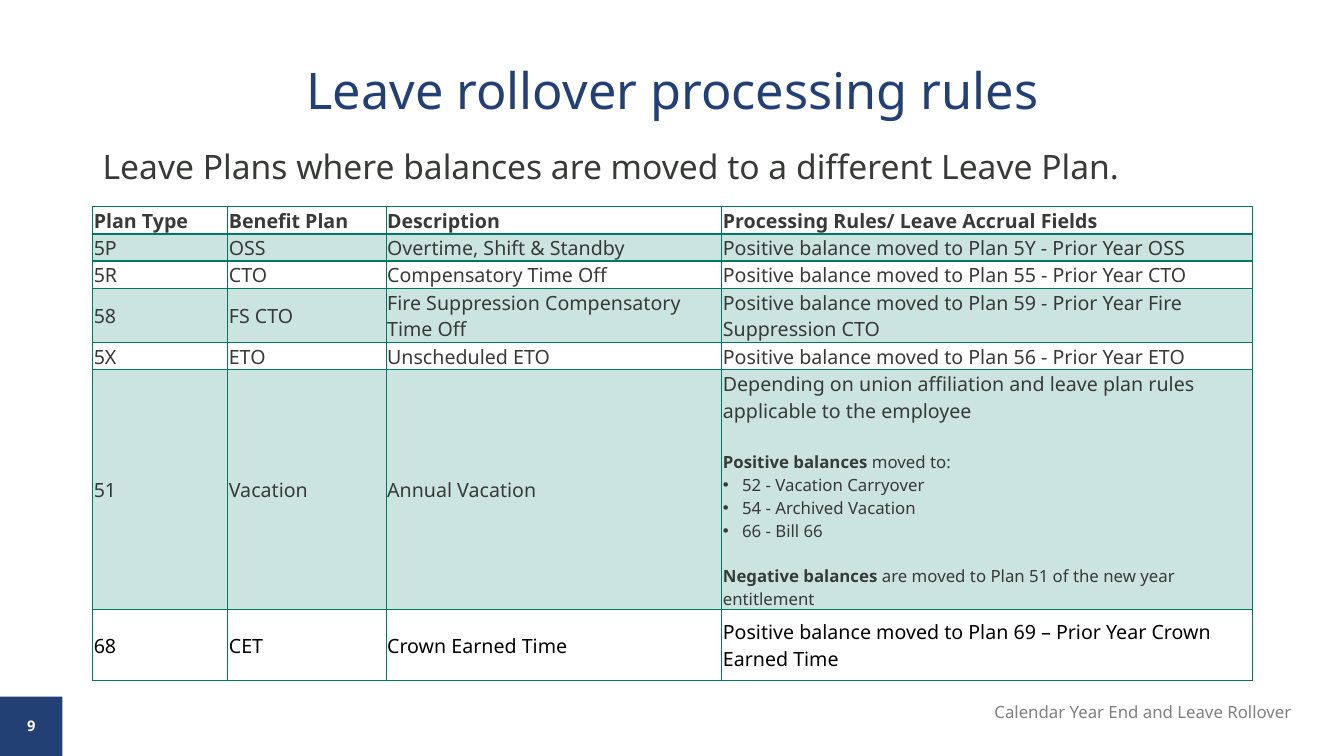
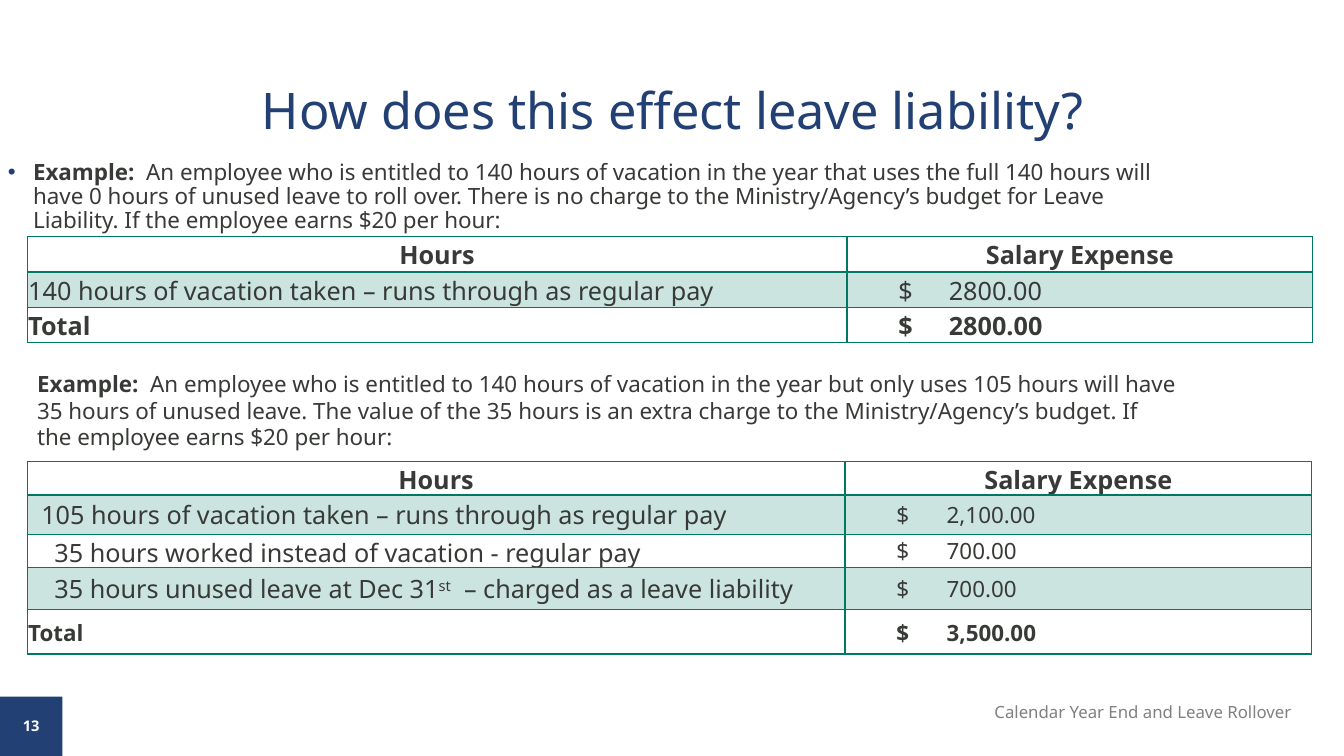
from dataclasses import dataclass
from lxml.etree import SubElement
from pptx import Presentation
from pptx.dml.color import RGBColor
from pptx.enum.shapes import MSO_SHAPE
from pptx.enum.text import MSO_ANCHOR, PP_ALIGN
from pptx.oxml.ns import qn
from pptx.util import Inches, Pt

FONT = "Noto Sans"
NAVY = "234075"
GREEN = "007864"
INK = "373A36"
BLACK = "000000"
GRAY = "808080"
WHITE = "FFFFFF"
TINT_PERCENT = 20


def color(value):
    return RGBColor.from_string(value)


def add_color(parent, value):
    fill = SubElement(parent, qn("a:solidFill"))
    SubElement(fill, qn("a:srgbClr"), val=value)


@dataclass
class Text:
    runs: object
    size: float = 14
    color: str = INK
    bold: bool = False
    align: object = PP_ALIGN.LEFT
    line_spacing: float = 1.0
    before: float = 0
    indent: float = 0
    bullet: str = ""
    tabs: tuple = ()


class Deck:
    def __init__(self):
        self.presentation = Presentation()
        self.presentation.slide_width = Inches(13.33)
        self.presentation.slide_height = Inches(7.5)
        self.slide = None

    def add_slide(self, number, title, title_height):
        layout = self.presentation.slide_layouts[6]
        self.slide = self.presentation.slides.add_slide(layout)
        self.add_band()
        self.add_text(0, 7.02, 0.62, 0.38,
                      Text(number, 10.5, WHITE, True, PP_ALIGN.CENTER), side=0.2, edge=0.1)
        self.add_text(9.67, 6.91, 3.24, 0.3,
                      Text("Calendar Year End and Leave Rollover", 12, GRAY, align=PP_ALIGN.RIGHT))
        self.add_text(0.92, 0.4, 11.5, title_height,
                      Text(title, 36, NAVY, align=PP_ALIGN.CENTER, line_spacing=0.9),
                      anchor=MSO_ANCHOR.MIDDLE)

    def add_band(self):
        band = self.slide.shapes.add_shape(
            MSO_SHAPE.RECTANGLE, Inches(0), Inches(6.91), Inches(0.62), Inches(0.59))
        band.shadow.inherit = False
        band.fill.solid()
        band.fill.fore_color.rgb = color(NAVY)
        band.line.fill.background()

    def add_text(self, left, top, width, height, text, anchor=MSO_ANCHOR.TOP, side=0.1, edge=0.05):
        box = self.slide.shapes.add_textbox(Inches(left), Inches(top), Inches(width), Inches(height))
        frame = box.text_frame
        frame.word_wrap = True
        frame.vertical_anchor = anchor
        frame.margin_left = frame.margin_right = Inches(side)
        frame.margin_top = frame.margin_bottom = Inches(edge)
        self.fill_frame(frame, [text])

    def fill_frame(self, frame, texts):
        for index, text in enumerate(texts):
            paragraph = frame.add_paragraph() if index else frame.paragraphs[0]
            self.fill_paragraph(paragraph, text)

    def fill_paragraph(self, paragraph, text):
        paragraph.alignment = text.align
        paragraph.line_spacing = text.line_spacing
        paragraph.space_before = Pt(text.before)
        self.set_indent(paragraph, text)
        runs = [(text.runs, "")] if isinstance(text.runs, str) else text.runs
        for content, style in runs:
            run = paragraph.add_run()
            run.text = content
            run.font.name = FONT
            run.font.size = Pt(text.size)
            run.font.bold = text.bold or style == "bold"
            run.font.color.rgb = color(text.color)
            if style == "superscript":
                run._r.get_or_add_rPr().set("baseline", "30000")

    def set_indent(self, paragraph, text):
        properties = paragraph._p.get_or_add_pPr()
        properties.set("marL", str(Inches(text.indent)))
        properties.set("indent", str(-Inches(text.indent) if text.bullet else 0))
        if text.bullet:
            bullet_color = SubElement(properties, qn("a:buClr"))
            SubElement(bullet_color, qn("a:srgbClr"), val=text.bullet)
            SubElement(properties, qn("a:buFont"), typeface="Arial")
            SubElement(properties, qn("a:buChar"), char="•")
        if text.tabs:
            tab_list = SubElement(properties, qn("a:tabLst"))
            for position, alignment in zip(text.tabs, ("l", "r")):
                SubElement(tab_list, qn("a:tab"), pos=str(Inches(position)), algn=alignment)

    def add_table(self, left, top, widths, heights, header, rows, header_anchor=MSO_ANCHOR.MIDDLE):
        table = self.slide.shapes.add_table(
            len(heights), len(widths), Inches(left), Inches(top),
            Inches(sum(widths)), Inches(sum(heights))).table
        table.first_row = table.horz_banding = False
        for column, width in zip(table.columns, widths):
            column.width = Inches(width)
        for row, height in zip(table.rows, heights):
            row.height = Inches(height)
        for row_index, texts in enumerate([header] + rows):
            for column_index, content in enumerate(texts):
                cell = table.cell(row_index, column_index)
                cell.vertical_anchor = MSO_ANCHOR.MIDDLE if row_index else header_anchor
                cell.margin_left = cell.margin_right = cell.margin_top = Inches(0.01)
                cell.margin_bottom = 0
                self.set_borders(cell, row_index)
                self.fill_cell(cell, row_index % 2 == 1)
                self.fill_frame(cell.text_frame, content if isinstance(content, list) else [content])

    def set_borders(self, cell, row_index):
        widths = {"lnL": 1, "lnR": 1, "lnT": 2 if row_index == 1 else 1, "lnB": 1 if row_index else 2}
        for side, width in widths.items():
            line = SubElement(cell._tc.get_or_add_tcPr(), qn("a:" + side), w=str(Pt(width)))
            add_color(line, GREEN)

    def fill_cell(self, cell, shaded):
        if not shaded:
            cell.fill.background()
            return
        cell.fill.solid()
        cell.fill.fore_color.rgb = color(GREEN)
        tint = cell._tc.tcPr.find(qn("a:solidFill"))[0]
        SubElement(tint, qn("a:alpha"), val=str(TINT_PERCENT * 1000))


def build_rules(deck):
    deck.add_slide("9", "Leave rollover processing rules", 1.04)
    deck.add_text(0.92, 1.44, 11.5, 0.6,
                  Text("Leave Plans where balances are moved to a different Leave Plan.", 24,
                       line_spacing=0.9, before=10))
    header = ["Plan Type", "Benefit Plan", "Description", "Processing Rules/ Leave Accrual Fields"]
    plans = [
        ("5P", "OSS", "Overtime, Shift & Standby",
         "Positive balance moved to Plan 5Y - Prior Year OSS"),
        ("5R", "CTO", "Compensatory Time Off",
         "Positive balance moved to Plan 55 - Prior Year CTO"),
        ("58", "FS CTO", "Fire Suppression Compensatory Time Off",
         "Positive balance moved to Plan 59 - Prior Year Fire Suppression CTO"),
        ("5X", "ETO", "Unscheduled ETO",
         "Positive balance moved to Plan 56 - Prior Year ETO"),
    ]
    targets = ["52 - Vacation Carryover", "54 - Archived Vacation", "66 - Bill 66"]
    vacation_rules = [
        Text("Depending on union affiliation and leave plan rules applicable to the employee"),
        Text([("Positive balances ", "bold"), ("moved to:", "")], 12, before=19),
        *[Text(target, 12, indent=0.19, bullet=INK) for target in targets],
        Text([("Negative balances ", "bold"),
              ("are moved to Plan 51 of the new year entitlement", "")], 12, before=16),
    ]
    crown = ["68", "CET", "Crown Earned Time",
             "Positive balance moved to Plan 69 – Prior Year Crown Earned Time"]
    rows = [[Text(value) for value in plan] for plan in plans]
    rows.append([Text("51"), Text("Vacation"), Text("Annual Vacation"), vacation_rules])
    rows.append([Text(value, color=BLACK) for value in crown])
    deck.add_table(0.92, 2.05, [1.34, 1.57, 3.33, 5.26], [0.27, 0.27, 0.27, 0.54, 0.27, 2.38, 0.7],
                   [Text(label, bold=True) for label in header], rows, MSO_ANCHOR.BOTTOM)


def build_liability(deck):
    deck.add_slide("13", "How does this effect leave liability?", 1.45)
    header = [Text(label, 18, bold=True, align=PP_ALIGN.CENTER) for label in ("Hours", "Salary Expense")]

    def amount(value, size, tabs, bold=False):
        return Text(f"\t$\t{value}", size, bold=bold, tabs=tabs)

    deck.add_text(-0.02, 1.55, 11.79, 0.8, Text([
        ("Example:  ", "bold"),
        ("An employee who is entitled to 140 hours of vacation in the year that uses the full 140 hours "
         "will have 0 hours of unused leave to roll over. There is no charge to the Ministry/Agency’s "
         "budget for Leave Liability. If the employee earns $20 per hour:", "")],
        16, line_spacing=0.9, before=10, indent=0.25, bullet=NAVY))
    full_tabs = (1.01, 3.57)
    deck.add_table(0.27, 2.35, [8.13, 4.62], [0.35] * 3, header, [
        [Text("140 hours of vacation taken – runs through as regular pay", 18),
         amount("2800.00", 18, full_tabs)],
        [Text("Total", 18, bold=True), amount("2800.00", 18, full_tabs, True)],
    ])

    deck.add_text(0.27, 3.62, 11.5, 0.91, Text([
        ("Example:  ", "bold"),
        ("An employee who is entitled to 140 hours of vacation in the year but only uses 105 hours will "
         "have 35 hours of unused leave. The value of the 35 hours is an extra charge to the "
         "Ministry/Agency’s budget. If the employee earns $20 per hour:", "")], 16))
    partial_tabs = (1.13, 3.48)
    unused_leave = [("35 hours unused leave at Dec 31", ""), ("st", "superscript"),
                    ("  – charged as a leave liability", "")]
    deck.add_table(0.27, 4.58, [8.11, 4.63], [0.33, 0.39, 0.33, 0.42, 0.44], header, [
        [Text("105 hours of vacation taken – runs through as regular pay", 18, indent=0.13),
         amount("2,100.00", 16, partial_tabs)],
        [Text("35 hours worked instead of vacation - regular pay", 18, indent=0.26),
         amount("700.00", 16, partial_tabs)],
        [Text(unused_leave, 18, indent=0.26), amount("700.00", 16, partial_tabs)],
        [Text("Total", 16, bold=True), amount("3,500.00", 16, partial_tabs, True)],
    ])


def main():
    deck = Deck()
    build_rules(deck)
    build_liability(deck)
    deck.presentation.save("out.pptx")


if __name__ == "__main__":
    main()
